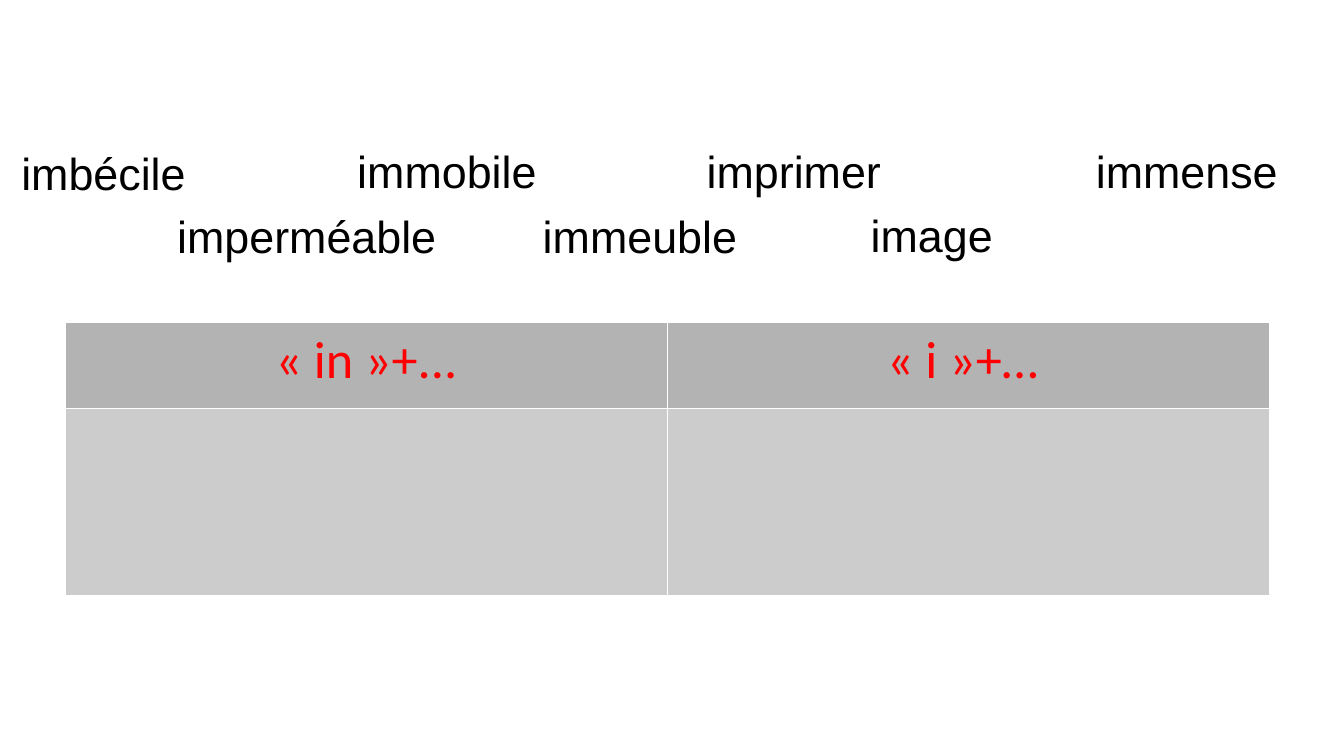
"""Builds a French spelling slide: words to sort by sound into a two-column table."""
from typing import NamedTuple

from lxml.etree import SubElement
from pptx import Presentation
from pptx.dml.color import RGBColor
from pptx.enum.text import PP_ALIGN
from pptx.oxml.ns import qn
from pptx.util import Emu, Pt

PX = 4572
WHITE, BLACK, RED = "FFFFFF", "000000", "FF0000"
HEAD_FILL, BODY_FILL = "B3B3B3", "CCCCCC"
BORDER_EMU = 762


class Word(NamedTuple):
    """A word to sort and its box in px."""
    text: str
    x: int
    y: int
    w: int
    h: int = 110


HEADINGS = ("« in »+...", "« i »+… ")
COL_W = 896
ROW_H = (128, 278)
UPPER, LOWER = 204, 300
WORDS = (
    Word("imperméable", 244, LOWER, 464),
    Word("immobile", 512, UPPER, 426),
    Word("immeuble", 788, LOWER, 346),
    Word("imprimer", 1032, UPPER, 448),
    Word("image", 1276, LOWER, 330, 94),
    Word("immense", 1611, UPPER, 330, 94),
    Word("imbécile", 12, UPPER + 3, 464),
)


def px(n: int) -> Emu:
    """Turn px into EMU."""
    return Emu(n * PX)


def rgb(value: str) -> RGBColor:
    """Turn a hex string into a colour."""
    return RGBColor.from_string(value)


def add_run(p, text: str, size: int, font: str, color: str) -> None:
    """Add one formatted run to a paragraph."""
    r = p.add_run()
    r.text = text
    r.font.size = Pt(size)
    r.font.name = font
    r.font.color.rgb = rgb(color)


def style_cell(cell, fill: str) -> None:
    """Give a cell thin white borders and a solid fill."""
    tc_pr = cell._tc.get_or_add_tcPr()
    for side in ("lnL", "lnR", "lnT", "lnB"):
        ln = SubElement(tc_pr, qn(f"a:{side}"), w=str(BORDER_EMU))
        SubElement(SubElement(ln, qn("a:solidFill")), qn("a:srgbClr"), val=WHITE)
    cell.fill.solid()
    cell.fill.fore_color.rgb = rgb(fill)


def add_sorting_table(s) -> None:
    """Draw the table with a heading row and an empty answer row."""
    frame = s.shapes.add_table(len(ROW_H), len(HEADINGS), px(97), px(479),
                               px(COL_W * len(HEADINGS)), px(sum(ROW_H)))
    table = frame.table
    table.first_row = table.horz_banding = False
    for row, height in zip(table.rows, ROW_H):
        row.height = px(height)
    for i, heading in enumerate(HEADINGS):
        table.columns[i].width = px(COL_W)
        style_cell(table.cell(0, i), HEAD_FILL)
        style_cell(table.cell(1, i), BODY_FILL)
        p = table.cell(0, i).text_frame.paragraphs[0]
        p.alignment = PP_ALIGN.CENTER
        add_run(p, heading, 28, "Calibri", RED)


def add_word(s, word: Word) -> None:
    """Draw one word in its text box."""
    sp = s.shapes.add_textbox(px(word.x), px(word.y), px(word.w), px(word.h))
    tf = sp.text_frame
    tf.word_wrap = True
    add_run(tf.paragraphs[0], word.text, 24, "Arial", BLACK)


def main() -> None:
    """Build and save the slide."""
    prs = Presentation()
    prs.slide_width, prs.slide_height = px(2000), px(1125)
    s = prs.slides.add_slide(prs.slide_layouts[6])
    add_sorting_table(s)
    for word in WORDS:
        add_word(s, word)
    prs.save("out.pptx")


if __name__ == "__main__":
    main()
